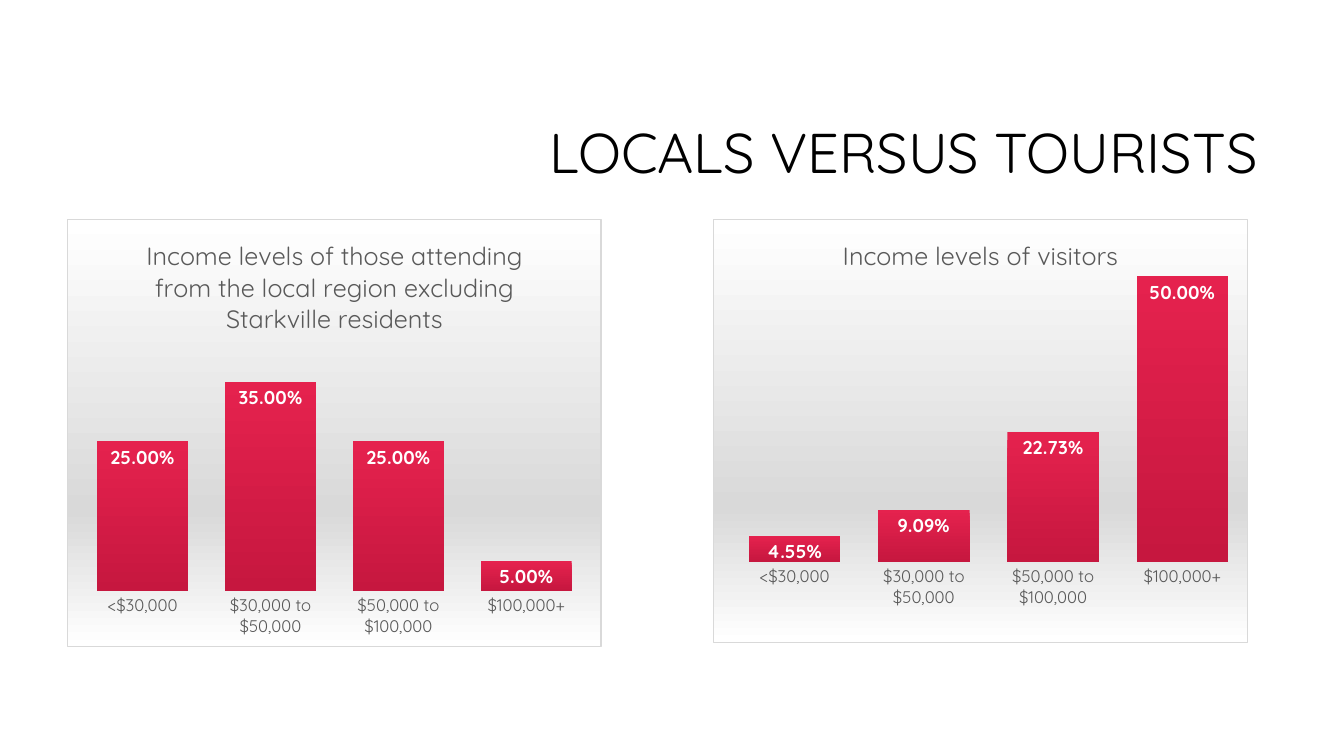
from dataclasses import dataclass

from lxml import etree
from pptx import Presentation
from pptx.chart.data import CategoryChartData
from pptx.dml.color import RGBColor
from pptx.enum.chart import XL_CHART_TYPE, XL_LABEL_POSITION, XL_TICK_MARK
from pptx.enum.text import MSO_ANCHOR, PP_ALIGN
from pptx.oxml import parse_xml
from pptx.oxml.ns import qn
from pptx.util import Cm, Pt

COLUMN = XL_CHART_TYPE.COLUMN_CLUSTERED
INSIDE = XL_LABEL_POSITION.INSIDE_END
NO_TICK = XL_TICK_MARK.NONE
RIGHT = PP_ALIGN.RIGHT
MIDDLE = MSO_ANCHOR.MIDDLE
PERCENT = "0.00%"
DRAW = "http://schemas.openxmlformats.org/drawingml/2006/main"
CHART = "http://schemas.openxmlformats.org/drawingml/2006/chart"


@dataclass(frozen=True)
class Theme:
    """Colours, type sizes and font of the slide."""
    face: str = "Quicksand"
    ink: str = "000000"
    gray: str = "595959"
    edge: str = "D9D9D9"
    white: str = "FFFFFF"
    panel: tuple = ((0, "FFFFFF"), (68, "D9D9D9"), (100, "FFFFFF"))
    bar: tuple = ((0, "E5224E"), (100, "C6173F"))
    head: float = 40
    title: float = 18
    label: float = 13.3
    axis: float = 12


THEME = Theme()
BANDS = ("<$30,000", "$30,000 to $50,000", "$50,000 to $100,000", "$100,000+")


def style(font, size, color, bold=False):
    """Set face, size, colour and weight of a font."""
    font.name = THEME.face
    font.size = Pt(size)
    font.bold = bold
    font.color.rgb = RGBColor.from_string(color)


def shade(stops):
    """Return a gradient fill that runs from top to bottom."""
    marks = "".join(
        f'<a:gs pos="{pos * 1000}"><a:srgbClr val="{color}"/></a:gs>'
        for pos, color in stops)
    return parse_xml(
        f'<a:gradFill xmlns:a="{DRAW}" rotWithShape="1"><a:gsLst>{marks}</a:gsLst>'
        '<a:lin ang="5400000" scaled="0"/></a:gradFill>')


def add_panel(chart):
    """Give the chart area its gradient and thin border."""
    area = etree.Element(qn("c:spPr"))
    area.append(shade(THEME.panel))
    line = etree.SubElement(area, qn("a:ln"), w=str(Pt(0.75)))
    fill = etree.SubElement(line, qn("a:solidFill"))
    etree.SubElement(fill, qn("a:srgbClr"), val=THEME.edge)
    chart._chartSpace.find(qn("c:chart")).addnext(area)


def place_plot(chart, frame):
    """Fix the inner plot area as shares of the chart."""
    plot = chart._chartSpace.find(f".//{qn('c:plotArea')}")
    for old in plot.findall(qn("c:layout")):
        plot.remove(old)
    sides = "".join(f'<c:{key} val="{part}"/>' for key, part in zip("xywh", frame))
    plot.insert(0, parse_xml(
        f'<c:layout xmlns:c="{CHART}"><c:manualLayout>'
        '<c:layoutTarget val="inner"/><c:xMode val="edge"/><c:yMode val="edge"/>'
        f'{sides}</c:manualLayout></c:layout>'))


def style_axes(chart, top):
    """Show plain band names and hide the value scale."""
    bands = chart.category_axis
    bands.major_tick_mark = bands.minor_tick_mark = NO_TICK
    bands.format.line.fill.background()
    style(bands.tick_labels.font, THEME.axis, THEME.gray)
    scale = chart.value_axis
    scale.visible = False
    scale.has_major_gridlines = False
    scale.minimum_scale = 0
    scale.maximum_scale = top


def style_bars(chart):
    """Fill the columns and label them at the inner end."""
    plot = chart.plots[0]
    plot.gap_width = 41
    plot.vary_by_categories = False
    plot.series[0]._element.get_or_add_spPr().append(shade(THEME.bar))
    labels = plot.series[0].data_labels
    labels.show_value = True
    labels.position = INSIDE
    labels.number_format = PERCENT
    labels.number_format_is_linked = False
    style(labels.font, THEME.label, THEME.white, True)


def add_bars(slide, title, name, shares, box, frame, top):
    """Add one column chart of income shares."""
    data = CategoryChartData(number_format=PERCENT)
    data.categories = BANDS
    data.add_series(name, shares)
    chart = slide.shapes.add_chart(COLUMN, *map(Cm, box), data).chart
    style(chart.font, 10, THEME.ink)
    chart.has_legend = False
    chart.has_title = True
    run = chart.chart_title.text_frame.paragraphs[0].add_run()
    run.text = title
    style(run.font, THEME.title, THEME.gray)
    chart.chart_title.include_in_layout = False
    add_panel(chart)
    place_plot(chart, frame)
    style_axes(chart, top)
    style_bars(chart)


def add_head(slide, text):
    """Move and format the slide title."""
    head = slide.shapes.title
    head.left, head.top, head.width, head.height = map(Cm, (8.05, 2.13, 23.9, 3.58))
    head.text_frame.vertical_anchor = MIDDLE
    para = head.text_frame.paragraphs[0]
    para.alignment = RIGHT
    para.line_spacing = 0.9
    run = para.add_run()
    run.text = text
    style(run.font, THEME.head, THEME.ink)


def main():
    """Build and save the slide."""
    deck = Presentation()
    deck.slide_width, deck.slide_height = Cm(33.87), Cm(19.05)
    slide = deck.slides.add_slide(deck.slide_layouts[5])
    add_head(slide, "LOCALS VERSUS TOURISTS")
    add_bars(slide, "Income levels of visitors", "Series 1",
             (0.0455, 0.0909, 0.2273, 0.5),
             (17.98, 5.51, 13.46, 10.69), (0.03, 0, 0.97, 0.81), 0.6)
    local = ("Income levels of those attending from the local region "
             "excluding Starkville residents")
    add_bars(slide, local, local, (0.25, 0.35, 0.25, 0.05),
             (1.7, 5.51, 13.46, 10.8), (0.02, 0.31, 0.96, 0.56), 0.4)
    deck.save("out.pptx")


if __name__ == "__main__":
    main()
